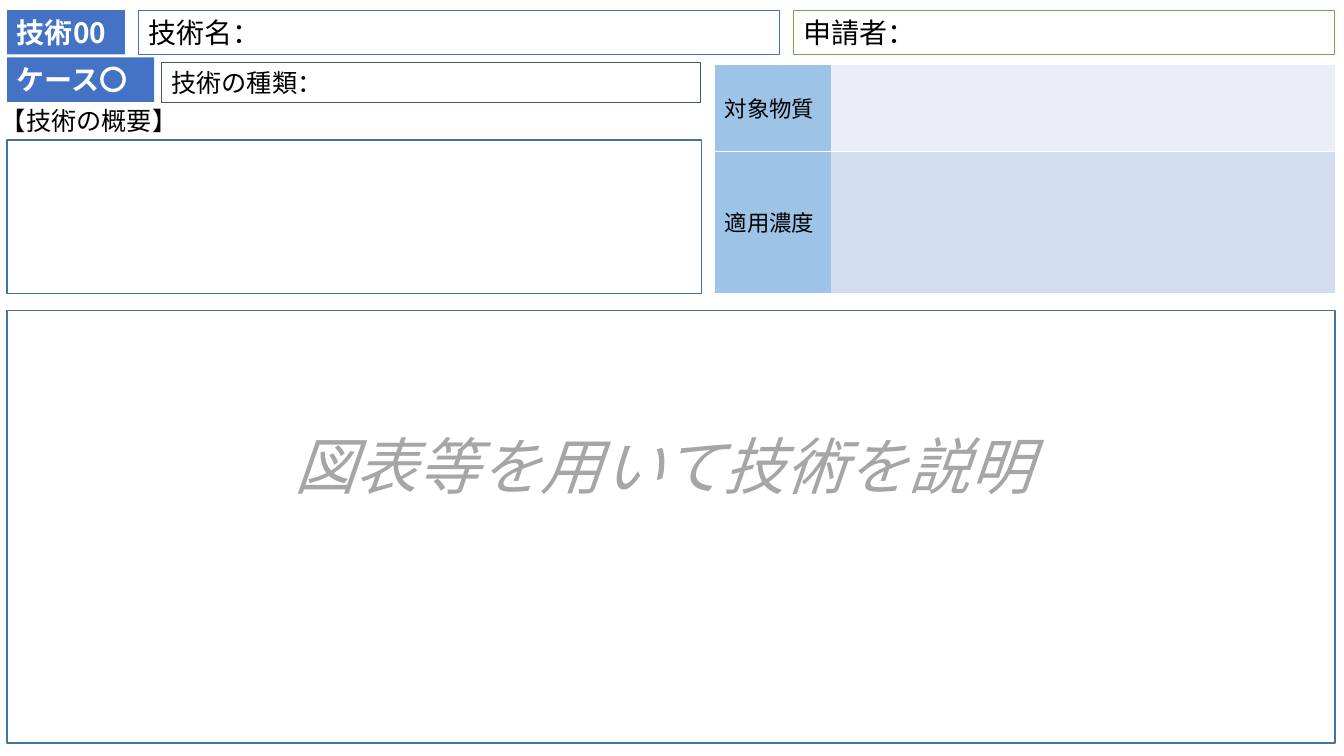
"""Build a one-page technology summary form with header boxes and a table."""
from lxml import etree
from pptx import Presentation
from pptx.dml.color import RGBColor
from pptx.enum.shapes import MSO_SHAPE
from pptx.enum.text import MSO_ANCHOR, PP_ALIGN
from pptx.oxml.ns import qn
from pptx.util import Inches, Pt

FONT = "Noto Sans CJK JP"
NO_TABLE_STYLE = "{2D5ABB26-0587-4C30-8999-92F81FD0307C}"
COLORS = {
    "blue": "4472C4", "green": "70AD47", "slate": "44546A", "frame": "43739E",
    "black": "000000", "white": "FFFFFF", "hint": "A6A6A6",
    "label": "9DC3E6", "light": "EAEFF7", "medium": "D2DEEF",
}


def color(name):
    return RGBColor.from_string(COLORS[name])


def write(frame, text, size, ink="black", bold=False, italic=False):
    frame.text = text
    frame.paragraphs[0].alignment = PP_ALIGN.LEFT
    for run in frame.paragraphs[0].runs:
        run.font.size = Pt(size)
        run.font.bold = bold
        run.font.italic = italic
        run.font.color.rgb = color(ink)
        run.font.name = FONT
        etree.SubElement(run.font._element, qn("a:ea"), typeface=FONT)


prs = Presentation()
prs.slide_width = Inches(13.33)
prs.slide_height = Inches(7.5)
slide = prs.slides.add_slide(prs.slide_layouts[6])

boxes = [
    (0.07, 0.1, 1.17, 0.44, "blue", None, 0, "技術00", 20),
    (1.37, 0.1, 6.36, 0.44, None, "blue", 0.75, "技術名：", 20),
    (7.87, 0.1, 5.37, 0.44, None, "green", 0.75, "申請者：", 20),
    (0.07, 0.57, 1.46, 0.44, "blue", None, 0, "ケース〇", 20),
    (1.6, 0.62, 5.35, 0.4, None, "slate", 0.75, "技術の種類：", 18),
    (0.07, 1.39, 6.89, 1.52, None, "frame", 1, "", 18),
    (0.07, 3.08, 13.17, 4.29, None, "frame", 1, "", 18),
]
for left, top, width, height, fill, line, weight, text, size in boxes:
    box = slide.shapes.add_shape(
        MSO_SHAPE.RECTANGLE, Inches(left), Inches(top), Inches(width), Inches(height))
    box.shadow.inherit = False
    if fill:
        box.fill.solid()
        box.fill.fore_color.rgb = color(fill)
    else:
        box.fill.background()
    if line:
        box.line.color.rgb = color(line)
        box.line.width = Pt(weight)
    else:
        box.line.fill.background()
    if text:
        box.text_frame.word_wrap = True
        box.text_frame.vertical_anchor = MSO_ANCHOR.TOP
        write(box.text_frame, text, size, "white" if fill else "black", bold=bool(fill))

overview_heading = slide.shapes.add_textbox(
    Inches(-0.09), Inches(1), Inches(2.07), Inches(0.4))
overview_heading.text_frame.word_wrap = True
write(overview_heading.text_frame, "【技術の概要】", 18)

figure_hint = slide.shapes.add_textbox(
    Inches(2.82), Inches(4.2), Inches(7.66), Inches(0.84))
figure_hint.text_frame.word_wrap = True
write(figure_hint.text_frame, "図表等を用いて技術を説明", 44, "hint", italic=True)

conditions = slide.shapes.add_table(
    2, 2, Inches(7.09), Inches(0.64), Inches(6.15), Inches(2.27)).table
conditions.first_row = False
conditions.horz_banding = False
conditions._tbl.tblPr.find(qn("a:tableStyleId")).text = NO_TABLE_STYLE
for column, width in zip(conditions.columns, (1.15, 5)):
    column.width = Inches(width)

rows = [("対象物質", 0.86, "light", "a:lnB"), ("適用濃度", 1.41, "medium", "a:lnT")]
for row, (label, height, shade, edge) in zip(conditions.rows, rows):
    row.height = Inches(height)
    for cell, fill in zip(row.cells, ("label", shade)):
        cell.fill.solid()
        cell.fill.fore_color.rgb = color(fill)
        cell.vertical_anchor = MSO_ANCHOR.MIDDLE
        border = etree.Element(qn(edge), w=str(Pt(1)))
        solid = etree.SubElement(border, qn("a:solidFill"))
        etree.SubElement(solid, qn("a:srgbClr"), val=COLORS["white"])
        cell._tc.tcPr.insert(0, border)
    write(row.cells[0].text_frame, label, 16)

prs.save("out.pptx")
